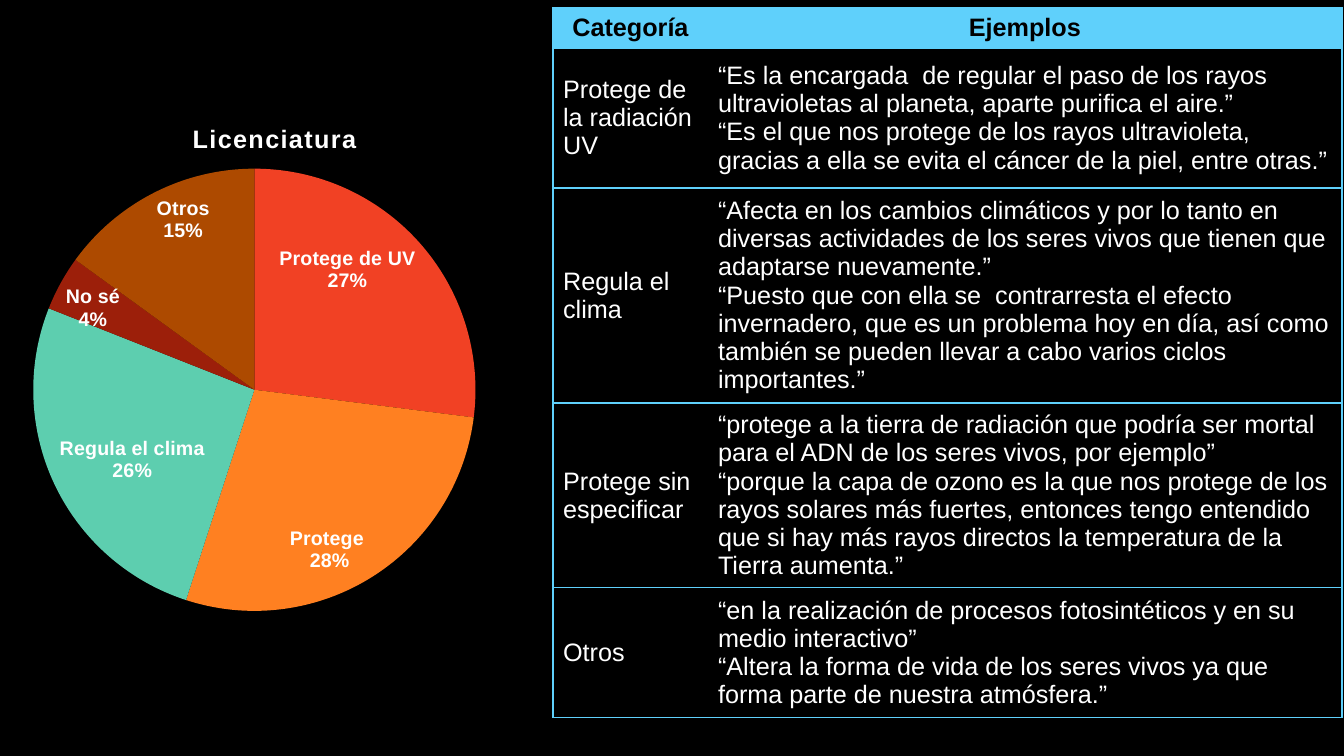
from lxml import etree
from pptx import Presentation
from pptx.chart.data import CategoryChartData
from pptx.dml.color import RGBColor
from pptx.enum.chart import XL_CHART_TYPE, XL_LABEL_POSITION
from pptx.enum.text import MSO_ANCHOR, PP_ALIGN
from pptx.oxml import parse_xml
from pptx.oxml.ns import nsdecls, qn
from pptx.util import Emu, Pt

PIE = XL_CHART_TYPE.PIE
IN_END = XL_LABEL_POSITION.INSIDE_END
MIDDLE = MSO_ANCHOR.MIDDLE
LEFT, CENTER = PP_ALIGN.LEFT, PP_ALIGN.CENTER

FONT = "Arial"
BLACK, WHITE, SKY = "000000", "FFFFFF", "5FD0FB"

SLICES = [
    ("Protege de UV", 27, "F14124"),
    ("Protege ", 28, "FF8021"),
    ("Regula el clima", 26, "5DCEAF"),
    ("No sé", 4, "9C1F0A"),
    ("Otros", 15, "AD4A00"),
]

COLS = [155, 634]
HEIGHTS = [40, 140, 215, 185, 130]
ROWS = [
    ("Categoría", ["Ejemplos"]),
    ("Protege de la radiación UV", [
        "“Es la encargada  de regular el paso de los rayos ultravioletas al planeta, "
        "aparte purifica el aire.”",
        "“Es el que nos protege de los rayos ultravioleta, gracias a ella se evita "
        "el cáncer de la piel, entre otras.”"]),
    ("Regula el clima", [
        "“Afecta en los cambios climáticos y por lo tanto en diversas actividades "
        "de los seres vivos que tienen que adaptarse nuevamente.”",
        "“Puesto que con ella se  contrarresta el efecto invernadero, que es un "
        "problema hoy en día, así como también se pueden llevar a cabo varios "
        "ciclos importantes.”"]),
    ("Protege sin especificar", [
        "“protege a la tierra de radiación que podría ser mortal para el ADN de "
        "los seres vivos, por ejemplo”",
        "“porque la capa de ozono es la que nos protege de los rayos solares más "
        "fuertes, entonces tengo entendido que si hay más rayos directos la "
        "temperatura de la Tierra aumenta.”"]),
    ("Otros", [
        "“en la realización de procesos fotosintéticos y en su medio interactivo”",
        "“Altera la forma de vida de los seres vivos ya que forma parte de "
        "nuestra atmósfera.”"]),
]


def px(n):
    return Emu(round(n * 914400 / 100.8))


def rgb(code):
    return RGBColor.from_string(code)


def style(font, size, color, bold):
    font.name, font.size, font.bold = FONT, Pt(size), bold
    font.color.rgb = rgb(color)


def edge(cell, sides):
    """Draw the named sides (out of L, R, T, B) and hide the others."""
    props = cell._tc.get_or_add_tcPr()
    for spot, side in enumerate("LRTB"):
        line = etree.Element(qn(f"a:ln{side}"), w=str(Pt(1)))
        if side in sides:
            fill = etree.SubElement(line, qn("a:solidFill"))
            etree.SubElement(fill, qn("a:srgbClr"), val=SKY)
        else:
            etree.SubElement(line, qn("a:noFill"))
        props.insert(spot, line)


def fill_cell(cell, texts, head, sides):
    cell.vertical_anchor = MIDDLE
    if head:
        cell.fill.solid()
        cell.fill.fore_color.rgb = rgb(SKY)
    else:
        cell.fill.background()
    edge(cell, sides)
    frame = cell.text_frame
    for n, text in enumerate(texts):
        para = frame.add_paragraph() if n else frame.paragraphs[0]
        para.alignment = CENTER if head else LEFT
        run = para.add_run()
        run.text = text
        style(run.font, 18, BLACK if head else WHITE, head)


def add_grid(slide):
    frame = slide.shapes.add_table(len(ROWS), len(COLS), px(553), px(8),
                                   px(sum(COLS)), px(sum(HEIGHTS)))
    table = frame.table
    table.horz_banding = False
    for col, width in zip(table.columns, COLS):
        col.width = px(width)
    for n, (label, quotes) in enumerate(ROWS):
        table.rows[n].height = px(HEIGHTS[n])
        fill_cell(table.cell(n, 0), [label], n == 0, "LTB")
        fill_cell(table.cell(n, 1), quotes, n == 0, "RTB")


def place(node, spot, **parts):
    """Give a chart part a fixed place, in shares of the chart's size."""
    for old in node.findall(qn("c:layout")):
        node.remove(old)
    layout = parse_xml(f"<c:layout {nsdecls('c')}><c:manualLayout/></c:layout>")
    if "w" in parts:
        etree.SubElement(layout[0], qn("c:layoutTarget"), val="inner")
    for name in "xy":
        etree.SubElement(layout[0], qn(f"c:{name}Mode"), val="edge")
    for name, share in parts.items():
        etree.SubElement(layout[0], qn(f"c:{name}"), val=str(share))
    node.insert(spot, layout)


def add_pie(slide):
    data = CategoryChartData()
    data.categories = [name for name, _, _ in SLICES]
    data.add_series("Series 1", [value for _, value, _ in SLICES])
    chart = slide.shapes.add_chart(PIE, px(-29), px(95), px(603), px(567), data).chart
    chart.has_legend = False
    style(chart.font, 10, WHITE, False)

    title = chart.chart_title
    run = title.text_frame.paragraphs[0].add_run()
    run.text = "Licenciatura"
    style(run.font, 18, WHITE, True)
    run._r.get_or_add_rPr().set("spc", "100")
    place(title._element, 1, x=0.36, y=0.04)
    place(chart._chartSpace.chart.plotArea, 0, x=0.1, y=0.13, w=0.74, h=0.78)

    plot = chart.plots[0]
    plot.vary_by_categories = True
    for n, (_, _, color) in enumerate(SLICES):
        fill = plot.series[0].points[n].format.fill
        fill.solid()
        fill.fore_color.rgb = rgb(color)
    labels = plot.series[0].data_labels
    labels.show_value = False
    labels.show_category_name = labels.show_percentage = True
    labels.position = IN_END
    style(labels.font, 14, WHITE, True)
    split = etree.Element(qn("c:separator"))
    split.text = "\n"
    labels._element.find(qn("c:showBubbleSize")).addnext(split)


def main():
    deck = Presentation()
    deck.slide_width, deck.slide_height = px(1344), px(756)
    slide = deck.slides.add_slide(deck.slide_layouts[6])
    back = slide.background.fill
    back.solid()
    back.fore_color.rgb = rgb(BLACK)
    add_grid(slide)
    add_pie(slide)
    deck.save("out.pptx")


if __name__ == "__main__":
    main()
